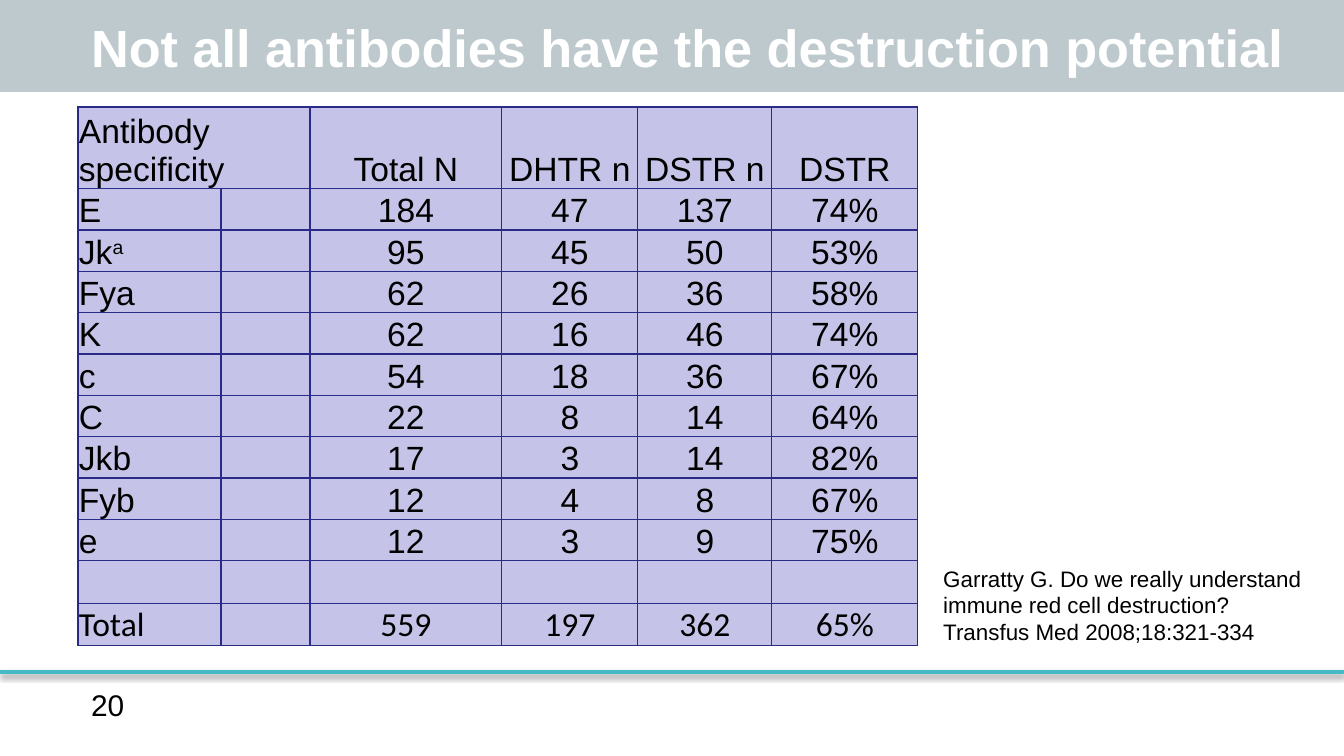
from lxml import etree
from pptx import Presentation
from pptx.dml.color import RGBColor
from pptx.enum.shapes import MSO_CONNECTOR, MSO_SHAPE
from pptx.enum.text import MSO_ANCHOR, PP_ALIGN
from pptx.oxml.ns import qn
from pptx.util import Pt

LEFT, CENTER = PP_ALIGN.LEFT, PP_ALIGN.CENTER
TOP, MIDDLE, BOTTOM = MSO_ANCHOR.TOP, MSO_ANCHOR.MIDDLE, MSO_ANCHOR.BOTTOM
RECT, STRAIGHT = MSO_SHAPE.RECTANGLE, MSO_CONNECTOR.STRAIGHT
SCALE = 914400 / 134.4

BLACK, WHITE = "000000", "FFFFFF"
BAND, RULE = "466673", "46B9C6"
CELL, GRID = "C5C4E8", "2A2A89"

COLS = [143, 89, 192, 136, 134, 146]
HEAD = ["Antibody specificity", "", "Total N", "DHTR n", "DSTR n", "DSTR"]
DATA = [
    ["E", "184", "47", "137", "74%"],
    ["Jk^a", "95", "45", "50", "53%"],
    ["Fya", "62", "26", "36", "58%"],
    ["K", "62", "16", "46", "74%"],
    ["c", "54", "18", "36", "67%"],
    ["C", "22", "8", "14", "64%"],
    ["Jkb", "17", "3", "14", "82%"],
    ["Fyb", "12", "4", "8", "67%"],
    ["e", "12", "3", "9", "75%"],
    ["", "", "", "", ""],
    ["Total", "559", "197", "362", "65%"],
]
ROWS = [77] + [39] * 9 + [43, 42]


def px(n):
    return round(n * SCALE)


def rgb(code):
    return RGBColor.from_string(code)


def sub(node, tag, **attrs):
    """Append a DrawingML child and return it."""
    return etree.SubElement(node, qn("a:" + tag), attrs)


class Deck:
    def __init__(self, wide, high):
        self.prs = Presentation()
        self.prs.slide_width, self.prs.slide_height = px(wide), px(high)
        self.slide = self.prs.slides.add_slide(self.prs.slide_layouts[6])
        self.shapes = self.slide.shapes
        self.font = "Arial"

    def run(self, para, text, size, color=BLACK, bold=False, font=None):
        run = para.add_run()
        run.text = text
        run.font.name = font or self.font
        run.font.size = Pt(size)
        run.font.bold = bold
        run.font.color.rgb = rgb(color)
        return run

    def text(self, x, y, w, h, text, size, color=BLACK, bold=False, anchor=TOP):
        frame = self.shapes.add_textbox(px(x), px(y), px(w), px(h)).text_frame
        frame.word_wrap = True
        frame.vertical_anchor = anchor
        self.run(frame.paragraphs[0], text, size, color, bold)

    def band(self, x, y, w, h, color, alpha):
        """Draw a see-through bar; alpha is its opacity in percent."""
        bar = self.shapes.add_shape(RECT, px(x), px(y), px(w), px(h))
        bar.shadow.inherit = False
        bar.fill.solid()
        bar.fill.fore_color.rgb = rgb(color)
        bar.line.fill.background()
        tone = bar._element.spPr.find(qn("a:solidFill"))[0]
        sub(tone, "alpha", val=str(alpha * 1000))

    def rule(self, x, y, w, color, width):
        """Draw a level line with a soft shadow below it."""
        line = self.shapes.add_connector(STRAIGHT, px(x), px(y), px(x + w), px(y))
        line.line.color.rgb = rgb(color)
        line.line.width = Pt(width)
        effects = sub(line._element.spPr, "effectLst")
        shade = sub(effects, "outerShdw", blurRad=str(Pt(3.1)), dist=str(Pt(1.6)),
                    dir="5400000", rotWithShape="0")
        sub(sub(shade, "srgbClr", val=BLACK), "alpha", val="38000")

    def cell(self, cell, text, align, font):
        cell.margin_left = cell.margin_right = cell.margin_top = px(1)
        cell.margin_bottom = 0
        cell.vertical_anchor = BOTTOM
        para = cell.text_frame.paragraphs[0]
        para.alignment = align
        base, _, power = text.partition("^")
        if base:
            self.run(para, base, 18, font=font)
        else:
            sub(para._p, "endParaRPr", sz="1200")
        if power:
            run = self.run(para, power, 18, font=font)
            run.font._element.set("baseline", "30000")
        props = cell._tc.get_or_add_tcPr()
        for side in ("lnL", "lnR", "lnT", "lnB"):
            edge = sub(props, side, w=str(Pt(0.75)))
            sub(sub(edge, "solidFill"), "srgbClr", val=GRID)
        cell.fill.solid()
        cell.fill.fore_color.rgb = rgb(CELL)

    def table(self, x, y, cols, rows, data):
        table = self.shapes.add_table(len(rows), len(cols), px(x), px(y),
                                      px(sum(cols)), px(sum(rows))).table
        for col, wide in zip(table.columns, cols):
            col.width = px(wide)
        for row, high in zip(table.rows, rows):
            row.height = px(high)
        for r, line in enumerate(data):
            font = "Calibri" if line[0] == "Total" else self.font
            for c, text in enumerate(line):
                self.cell(table.cell(r, c), text, CENTER if c > 1 else LEFT, font)
        table.cell(0, 0).merge(table.cell(0, 1))


def main():
    deck = Deck(1344, 756)
    deck.text(78, 680, 258, 50, "20", 16)
    deck.band(0, 0, 1344, 92, BAND, 35)
    deck.rule(0, 672, 1344, RULE, 2)
    deck.text(78, 16, 1266, 62, "Not all antibodies have the destruction potential",
              28, WHITE, True, MIDDLE)
    body = [[name, "", *values] for name, *values in DATA]
    deck.table(78, 107, COLS, ROWS, [HEAD] + body)
    deck.text(930, 558, 402, 95, "Garratty G. Do we really understand immune red cell "
              "destruction? Transfus Med 2008;18:321-334", 12)
    deck.prs.save("out.pptx")


if __name__ == "__main__":
    main()
